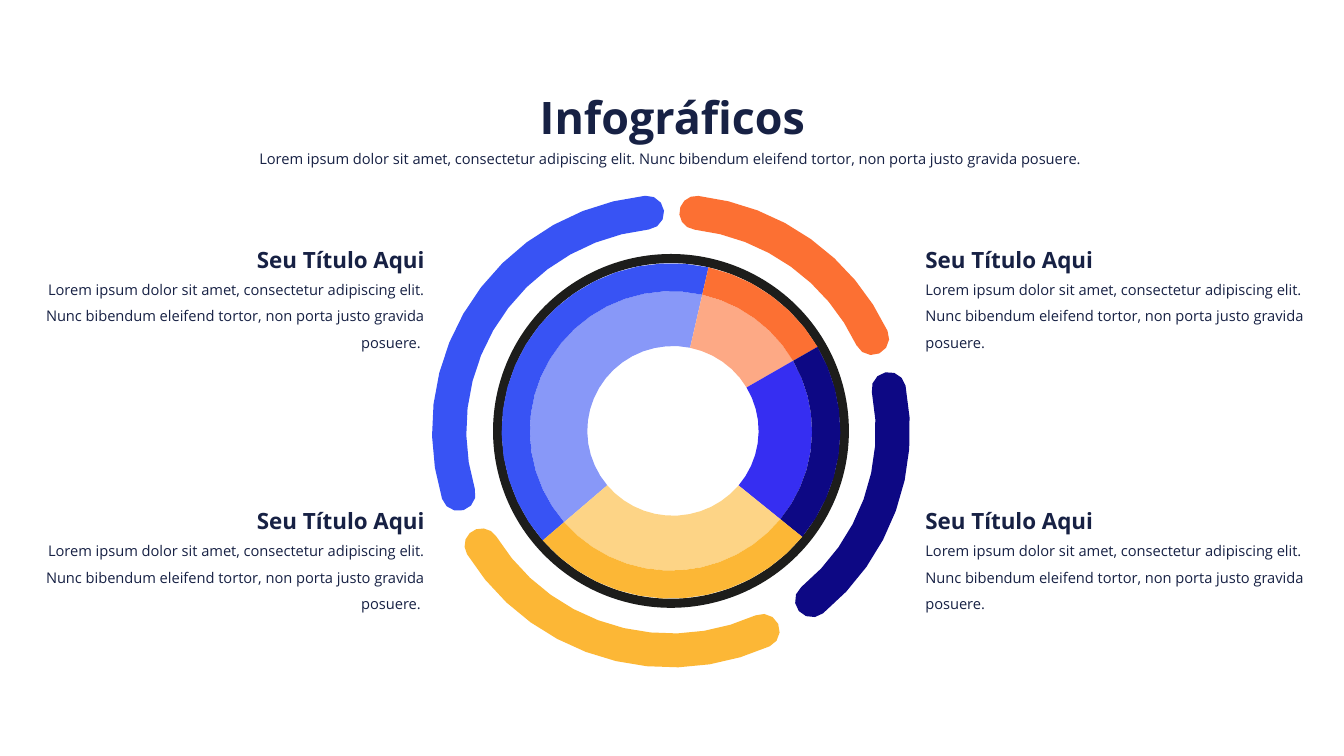
from collections import namedtuple
from dataclasses import dataclass
from math import ceil, cos, radians, sin

from pptx import Presentation
from pptx.dml.color import RGBColor
from pptx.enum.shapes import MSO_SHAPE as Shape
from pptx.enum.text import MSO_ANCHOR as Anchor, MSO_AUTO_SIZE as AutoSize, PP_ALIGN as Align
from pptx.util import Inches, Pt

Box = namedtuple("Box", "left top width height")
Segment = namedtuple("Segment", "start end rim core arc_start arc_end")


@dataclass(frozen=True)
class Theme:
    font: str = "Open Sans"
    text: str = "172144"
    ring: str = "1D1D1B"
    title_size: float = 32
    heading_size: float = 16
    body_size: float = 10.5


THEME = Theme()
LOREM = (
    "Lorem ipsum dolor sit amet, consectetur adipiscing elit. "
    "Nunc bibendum eleifend tortor, non porta justo gravida posuere."
)
HEADING = "Seu Título Aqui"
SEGMENTS = [
    Segment(229.2, 372.8, "3853F4", "8898F8", 253.3, 353.8),
    Segment(12.8, 59.9, "FC7033", "FDA985", 6.6, 65),
    Segment(59.9, 129.2, "0D0884", "362EF2", 79, 140.5),
    Segment(129.2, 229.2, "FCB736", "FDD486", 155.6, 238.6),
]
RIM_RADIUS, CORE_RADIUS, HOLE_RADIUS, HOLE_DRIFT = 1.68, 1.4, 0.85, 0.02
ARC_RADIUS, CAP_RADIUS = 2.2, 0.17
FLATTEN = 0.99
RING_WIDTH = 0.09
ARC_STEP, CAP_STEP = 8, 30


def paint(shape, color):
    shape.shadow.inherit = False
    shape.fill.solid()
    shape.fill.fore_color.rgb = RGBColor.from_string(color)
    shape.line.fill.background()


def sweep(center, radius, start, end, drift=0, stride=ARC_STEP):
    steps = ceil(abs(end - start) / stride)
    points = []
    for step in range(steps + 1):
        angle = radians(start + (end - start) * step / steps)
        reach = radius + drift * sin(angle)
        points.append((center[0] + reach * sin(angle), center[1] - FLATTEN * reach * cos(angle)))
    return points


def add_outline(shapes, points, color):
    corners = [(Inches(x), Inches(y)) for x, y in points]
    builder = shapes.build_freeform(*corners[0], scale=1.0)
    builder.add_line_segments(corners[1:], close=True)
    paint(builder.convert_to_shape(), color)


def add_sector(shapes, center, segment, outer, inner, color, drift=0):
    points = sweep(center, outer, segment.start, segment.end)
    points += sweep(center, inner, segment.end, segment.start, drift)
    add_outline(shapes, points, color)


def add_round_arc(shapes, center, segment):
    start, end = segment.arc_start, segment.arc_end
    head, *_, tail = sweep(center, ARC_RADIUS, start, end)
    points = sweep(center, ARC_RADIUS + CAP_RADIUS, start, end)
    points += sweep(tail, CAP_RADIUS, end, end + 180, stride=CAP_STEP)[1:-1]
    points += sweep(center, ARC_RADIUS - CAP_RADIUS, end, start)
    points += sweep(head, CAP_RADIUS, start + 180, start + 360, stride=CAP_STEP)[1:-1]
    add_outline(shapes, points, segment.rim)


def add_wheel(page, box):
    center = (box.left + box.width / 2, box.top + box.height / 2)
    shapes = page.shapes.add_group_shape().shapes
    ring = shapes.add_shape(Shape.DONUT, *map(Inches, box))
    ring.adjustments[0] = RING_WIDTH / box.height
    paint(ring, THEME.ring)
    for segment in SEGMENTS:
        add_sector(shapes, center, segment, CORE_RADIUS, HOLE_RADIUS, segment.core, HOLE_DRIFT)
        add_sector(shapes, center, segment, RIM_RADIUS, CORE_RADIUS, segment.rim)
        add_round_arc(shapes, center, segment)


def set_text(holder, box, text, size, align, bold=False, spacing=1.0):
    holder.left, holder.top, holder.width, holder.height = map(Inches, box)
    frame = holder.text_frame
    frame.text = text
    frame.word_wrap = True
    frame.auto_size = AutoSize.SHAPE_TO_FIT_TEXT
    frame.vertical_anchor = Anchor.TOP
    para = frame.paragraphs[0]
    para.alignment = align
    para.line_spacing = spacing
    para.space_before = Pt(0)
    para.font.name = THEME.font
    para.font.size = Pt(size)
    para.font.bold = bold
    para.font.color.rgb = RGBColor.from_string(THEME.text)


def add_header(page, box):
    title, subtitle = page.placeholders
    set_text(title, Box(box.left, box.top, box.width, 0.64), "Infográficos",
             THEME.title_size, Align.CENTER, bold=True)
    set_text(subtitle, Box(box.left, box.top + 0.51, box.width, 0.37), LOREM + " ",
             THEME.body_size, Align.CENTER, spacing=1.5)


def add_caption(page, box, align, text):
    heading_box = Box(box.left, box.top, box.width, 0.37)
    body_box = Box(box.left, box.top + 0.26, box.width, box.height - 0.26)
    heading = page.shapes.add_textbox(*map(Inches, heading_box))
    set_text(heading, heading_box, HEADING, THEME.heading_size, align, bold=True)
    body = page.shapes.add_textbox(*map(Inches, body_box))
    set_text(body, body_box, text, THEME.body_size, align, spacing=1.5)


def main():
    deck = Presentation()
    deck.slide_width, deck.slide_height = Inches(13.33), Inches(7.5)
    page = deck.slides.add_slide(deck.slide_layouts[0])
    add_wheel(page, Box(4.89, 2.52, 3.53, 3.51))
    add_header(page, Box(0.39, 0.84, 12.56, 0.88))
    for top in (2.39, 4.98):
        add_caption(page, Box(0.27, top, 4.04, 1.16), Align.RIGHT, LOREM + " ")
        add_caption(page, Box(9.08, top, 4.04, 1.16), Align.LEFT, LOREM)
    deck.save("out.pptx")


if __name__ == "__main__":
    main()
